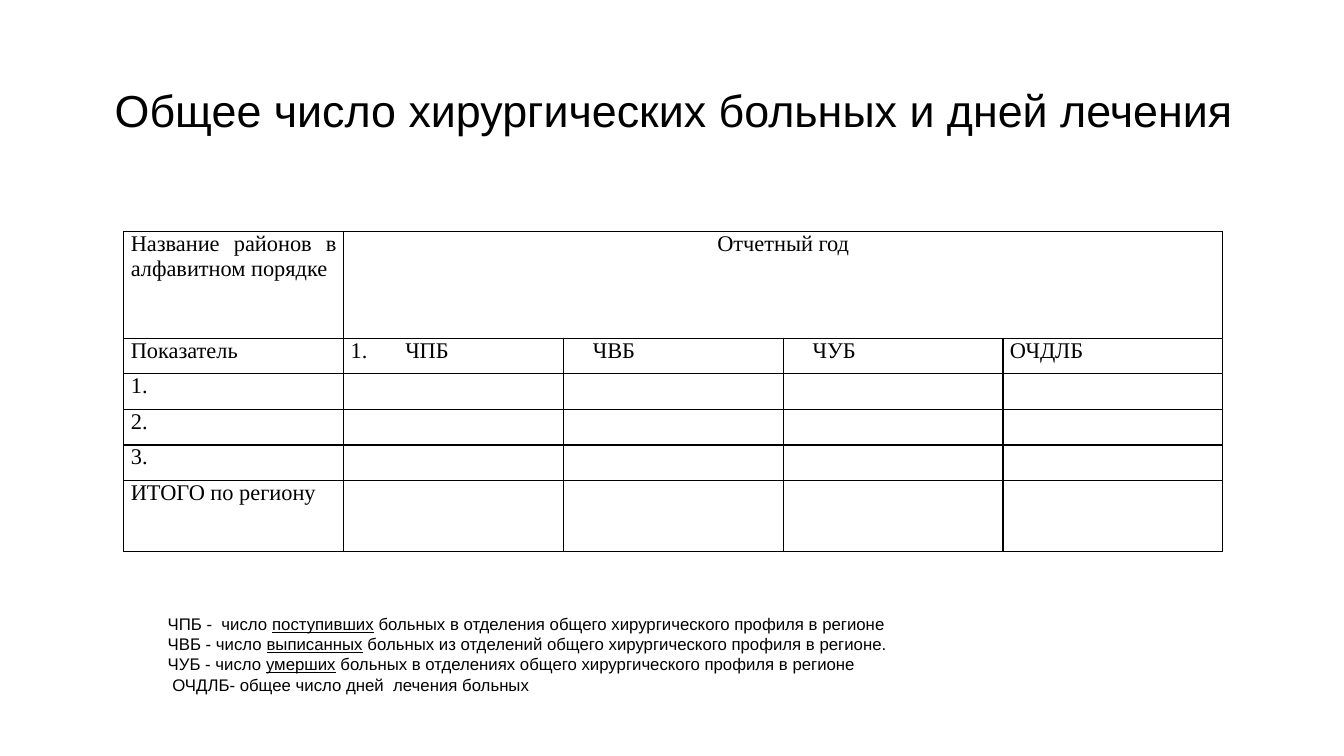
from lxml.etree import SubElement
from pptx import Presentation
from pptx.dml.color import RGBColor
from pptx.enum.text import MSO_ANCHOR, PP_ALIGN
from pptx.oxml.ns import qn
from pptx.util import Pt

BLACK = "000000"
LEFT, CENTER, JUSTIFY = PP_ALIGN.LEFT, PP_ALIGN.CENTER, PP_ALIGN.JUSTIFY

# Each cell: text, alignment, left indent
ROWS = [
    (76, [("Название районов в алфавитном порядке", JUSTIFY, 0),
          ("Отчетный год", CENTER, 0)]),
    (25.4, [("Показатель", JUSTIFY, 0), ("ЧПБ", JUSTIFY, 39), ("ЧВБ", LEFT, 16),
            ("ЧУБ", LEFT, 16), ("ОЧДЛБ", JUSTIFY, 0)]),
    (25.4, [("1.", LEFT, 0)]),
    (25.4, [("2.", LEFT, 0)]),
    (25.4, [("3.", LEFT, 0)]),
    (50.8, [("ИТОГО по региону", JUSTIFY, 0)]),
]
COLUMNS = 5

# Each note: text before, underlined text, text after, left indent
NOTES = [
    ("ЧПБ -  число ", "поступивших",
     " больных в отделения общего хирургического профиля в регионе", 3.3),
    ("ЧВБ - число ", "выписанных",
     " больных из отделений общего хирургического профиля в регионе.", 3.3),
    ("ЧУБ - число ", "умерших",
     " больных в отделениях общего хирургического профиля в регионе", 3.3),
    ("ОЧДЛБ- общее число дней  лечения больных", "", "", 6.6),
]


def color(hex_string):
    return RGBColor.from_string(hex_string)


def set_font(p, name, size):
    p.font.name = name
    p.font.size = Pt(size)
    p.font.color.rgb = color(BLACK)


def set_indent(p, left, first=0):
    pPr = p._p.get_or_add_pPr()
    pPr.set("marL", str(Pt(left)))
    pPr.set("indent", str(Pt(first)))
    return pPr


def add_text_frame(s, x, y, w, h):
    tf = s.shapes.add_textbox(Pt(x), Pt(y), Pt(w), Pt(h)).text_frame
    tf.word_wrap = True
    tf.vertical_anchor = MSO_ANCHOR.MIDDLE
    return tf


def add_title(s, x, y, w, h):
    p = add_text_frame(s, x, y, w, h).paragraphs[0]
    p.text = "Общее число хирургических больных и дней лечения"
    p.line_spacing = 0.9
    set_font(p, "Arial", 32)
    set_indent(p, 8.9)


def set_borders(cell):
    tcPr = cell._tc.get_or_add_tcPr()
    for i, side in enumerate(("lnL", "lnR", "lnT", "lnB")):
        ln = tcPr.makeelement(qn(f"a:{side}"), {"w": str(Pt(1))})
        fill = SubElement(ln, qn("a:solidFill"))
        SubElement(fill, qn("a:srgbClr"), val=BLACK)
        tcPr.insert(i, ln)


def add_report_table(s, x, y, w):
    height = sum(h for h, _ in ROWS)
    table = s.shapes.add_table(len(ROWS), COLUMNS, Pt(x), Pt(y), Pt(w), Pt(height)).table
    table.first_row = table.horz_banding = False
    for column in table.columns:
        column.width = Pt(w / COLUMNS)
    for r, (h, texts) in enumerate(ROWS):
        table.rows[r].height = Pt(h)
        texts = texts + [("", LEFT, 0)] * (COLUMNS - len(texts))
        for c, (text, align, indent) in enumerate(texts):
            cell = table.cell(r, c)
            cell.fill.background()
            cell.margin_left = cell.margin_right = Pt(5)
            cell.margin_top = cell.margin_bottom = 0
            set_borders(cell)
            p = cell.text_frame.paragraphs[0]
            p.text = text
            p.alignment = align
            set_font(p, "Times New Roman", 16)
            set_indent(p, indent)
    table.cell(0, 1).merge(table.cell(0, COLUMNS - 1))
    numbered = table.cell(1, 1).text_frame.paragraphs[0]
    pPr = set_indent(numbered, 39, -39)
    bullet = pPr.makeelement(qn("a:buAutoNum"), {"type": "arabicPeriod"})
    pPr.insert(0, bullet)


def add_notes_block(s, x, y, w, h):
    """Explain the abbreviations used in the table header."""
    tf = add_text_frame(s, x, y, w, h)
    tf.margin_bottom = Pt(8.6)
    for i, (before, underlined, after, indent) in enumerate(NOTES):
        p = tf.add_paragraph() if i else tf.paragraphs[0]
        set_font(p, "Arial", 12)
        set_indent(p, indent)
        for text in filter(None, (before, underlined, after)):
            r = p.add_run()
            r.text = text
            if text == underlined:
                r.font.underline = True


def main():
    prs = Presentation()
    prs.slide_width, prs.slide_height = Pt(960), Pt(540)
    s = prs.slides.add_slide(prs.slide_layouts[6])
    add_title(s, 66, 28.8, 828, 104.4)
    add_report_table(s, 88.5, 165.6, 785)
    add_notes_block(s, 109.4, 417.6, 687.6, 104.4)
    prs.save("out.pptx")


if __name__ == "__main__":
    main()
